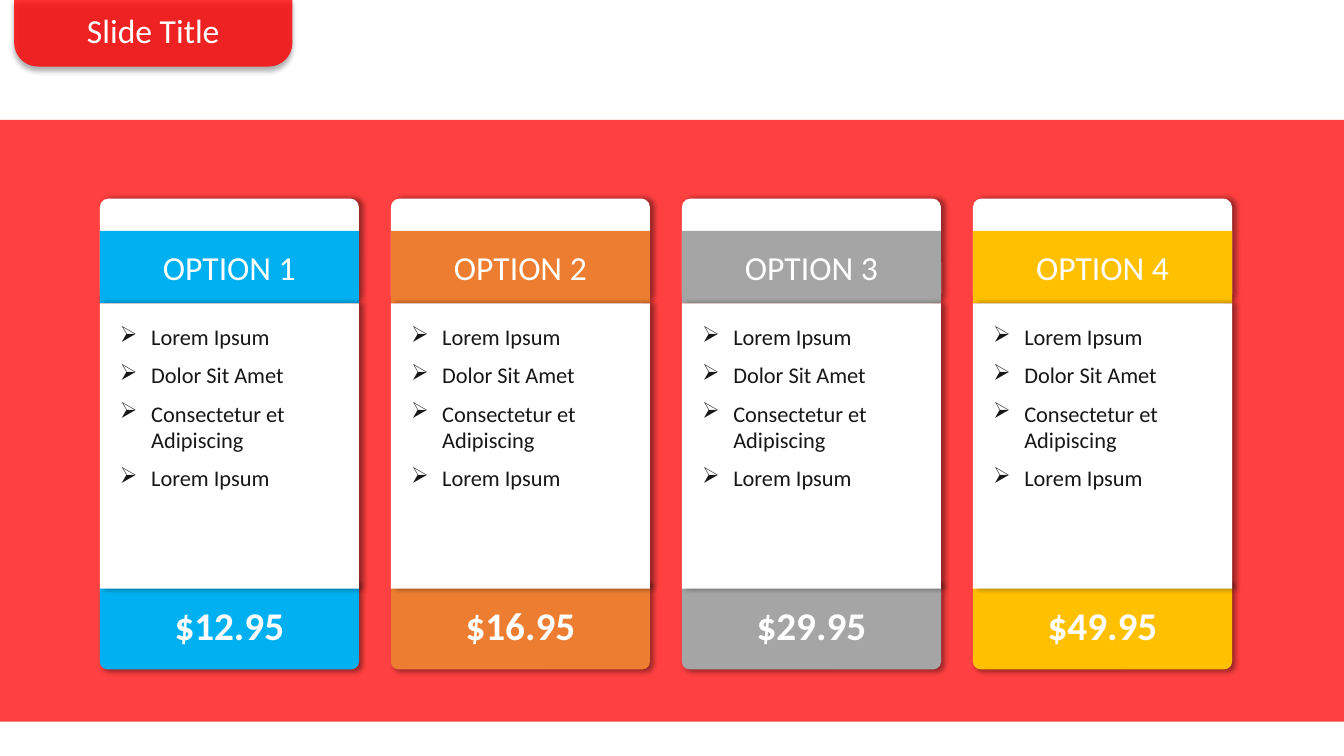
from lxml.etree import SubElement
from pptx import Presentation
from pptx.dml.color import RGBColor
from pptx.enum.shapes import MSO_SHAPE
from pptx.enum.text import MSO_ANCHOR, PP_ALIGN
from pptx.oxml.ns import qn
from pptx.util import Inches, Pt

# Content
TITLE = "Slide Title"
FEATURES = ["Lorem Ipsum", "Dolor Sit Amet", "Consectetur et Adipiscing", "Lorem Ipsum"]
OPTIONS = [
    ("OPTION 1", "$12.95", "00B0F0"),
    ("OPTION 2", "$16.95", "ED7D31"),
    ("OPTION 3", "$29.95", "A5A5A5"),
    ("OPTION 4", "$49.95", "FFC000"),
]
WHITE, INK, RED = "FFFFFF", "181717", "FF0000"

# Card layout, in inches
FIRST_LEFT, LAST_LEFT, CARD_W = 0.99, 9.65, 2.57
CAP_TOP, HEAD_TOP, BODY_TOP, PRICE_TOP = 1.97, 2.29, 3.01, 5.75
BODY_H, PRICE_H = 2.83, 0.89
PITCH = (LAST_LEFT - FIRST_LEFT) / (len(OPTIONS) - 1)
CORNER = 0.083


def rgb(color):
    return RGBColor.from_string(color)


def add_shadow(sp, angle):
    effects = sp._element.spPr.find(qn("a:effectLst"))
    shadow = SubElement(effects, qn("a:outerShdw"), blurRad=str(Pt(4)), dist=str(Pt(3)),
                        dir=str(angle * 60000), algn="ctr", rotWithShape="0")
    color = SubElement(shadow, qn("a:srgbClr"), val="000000")
    SubElement(color, qn("a:alpha"), val="40000")


def add_box(shapes, kind, box, fill, adjust=(), alpha=None, shadow=None):
    sp = shapes.add_shape(kind, *map(Inches, box))
    for i, value in enumerate(adjust):
        sp.adjustments[i] = value
    sp.fill.solid()
    sp.fill.fore_color.rgb = rgb(fill)
    if alpha is not None:
        color = sp._element.spPr.find(qn("a:solidFill")).find(qn("a:srgbClr"))
        SubElement(color, qn("a:alpha"), val=str(alpha * 1000))
    sp.line.fill.background()
    sp.shadow.inherit = False
    if shadow is not None:
        add_shadow(sp, shadow)
    return sp


def add_bullet(p):
    pPr = p._p.get_or_add_pPr()
    pPr.set("marL", str(Inches(0.31)))
    pPr.set("indent", str(-Inches(0.31)))
    SubElement(pPr, qn("a:buChar"), char="➢")


def write(sp, lines, size, color=WHITE, bold=False, align=PP_ALIGN.CENTER,
          anchor=MSO_ANCHOR.MIDDLE, bullets=False, gap=0, insets=(0.1, 0.05, 0.1, 0.05)):
    tf = sp.text_frame
    tf.word_wrap = True
    tf.vertical_anchor = anchor
    tf.margin_left, tf.margin_top, tf.margin_right, tf.margin_bottom = map(Inches, insets)
    for i, line in enumerate(lines):
        p = tf.add_paragraph() if i else tf.paragraphs[0]
        p.alignment = align
        if i and gap:
            p.space_before = Pt(gap)
        if bullets:
            add_bullet(p)
        r = p.add_run()
        r.text = line
        r.font.name, r.font.size, r.font.bold = "Calibri", Pt(size), bold
        r.font.color.rgb = rgb(color)


def add_card(shapes, left, name, price, color):
    # Price footer
    sp = add_box(shapes, MSO_SHAPE.ROUNDED_RECTANGLE, (left, PRICE_TOP, CARD_W, PRICE_H),
                 color, adjust=[CORNER], shadow=45)
    write(sp, [price], 28, bold=True)
    # White cap and coloured header
    add_box(shapes, MSO_SHAPE.ROUNDED_RECTANGLE,
            (left, CAP_TOP, CARD_W, BODY_TOP - CAP_TOP), WHITE, adjust=[CORNER], shadow=0)
    sp = add_box(shapes, MSO_SHAPE.RECTANGLE,
                 (left, HEAD_TOP, CARD_W, BODY_TOP - HEAD_TOP), color)
    write(sp, [name], 24)
    # Feature list
    sp = add_box(shapes, MSO_SHAPE.RECTANGLE, (left, BODY_TOP, CARD_W, BODY_H),
                 WHITE, shadow=0)
    write(sp, FEATURES, 16, color=INK, align=PP_ALIGN.LEFT, anchor=MSO_ANCHOR.TOP,
          bullets=True, gap=8, insets=(0.2, 0.2, 0.1, 0.05))


def main():
    prs = Presentation()
    prs.slide_width, prs.slide_height = Inches(13.33), Inches(7.5)
    s = prs.slides.add_slide(prs.slide_layouts[6])

    # Red band
    add_box(s.shapes, MSO_SHAPE.RECTANGLE, (0, 1.19, 13.33, 5.97), RED, alpha=75)

    # Pricing cards
    for i, option in enumerate(OPTIONS):
        add_card(s.shapes, FIRST_LEFT + i * PITCH, *option)

    # Title tab
    tab = s.shapes.add_group_shape()
    sp = add_box(tab.shapes, MSO_SHAPE.ROUND_2_SAME_RECTANGLE, (0.14, -0.01, 2.76, 0.67),
                 RED, adjust=[0.352, 0], alpha=80, shadow=90)
    sp.rotation = 180
    tb = tab.shapes.add_textbox(*map(Inches, (0.14, 0.05, 2.76, 0.5)))
    write(tb, [TITLE], 24, anchor=MSO_ANCHOR.TOP)

    prs.save("out.pptx")


if __name__ == "__main__":
    main()
